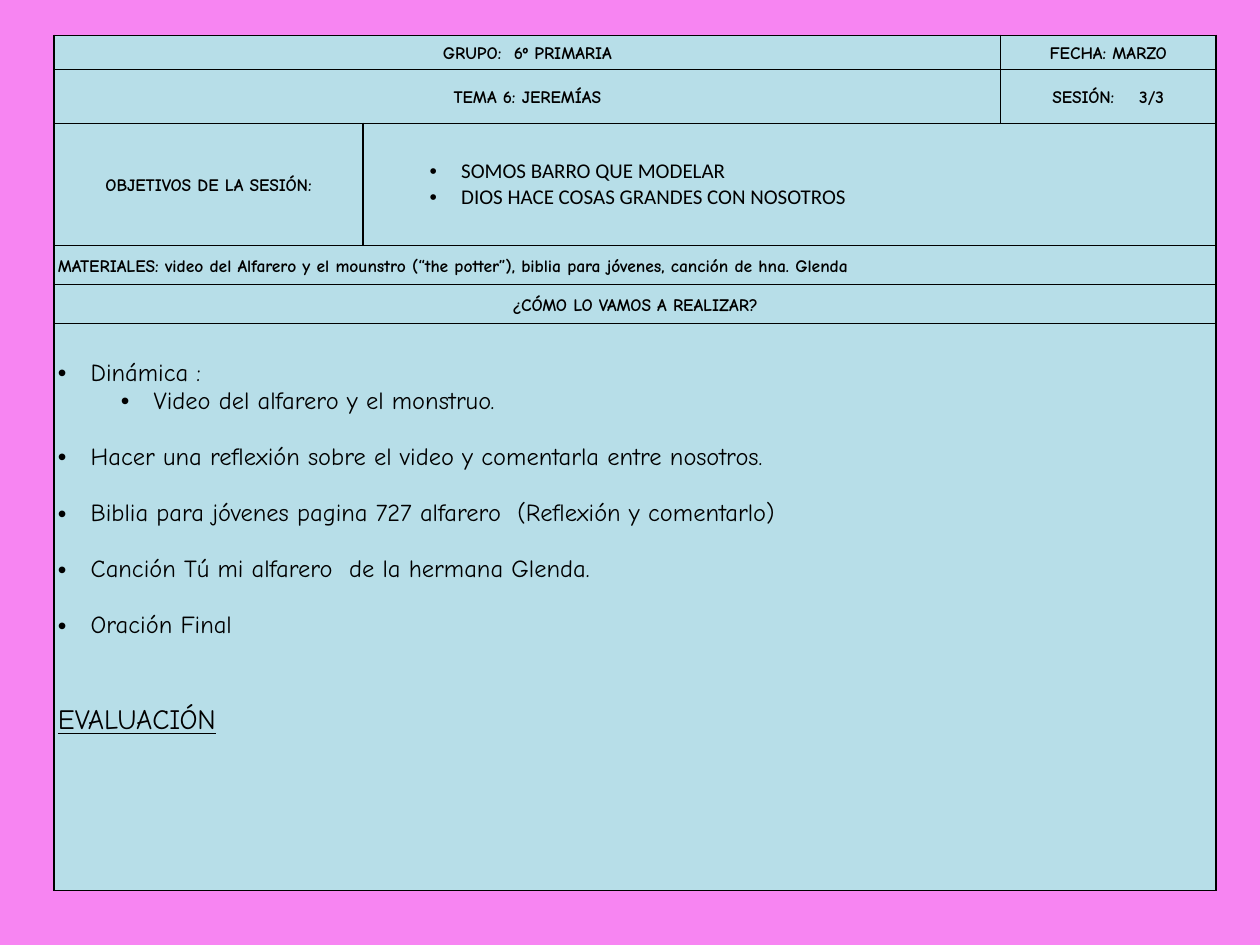
from dataclasses import dataclass

from lxml import etree
from pptx import Presentation
from pptx.dml.color import RGBColor
from pptx.enum.text import MSO_ANCHOR, PP_ALIGN
from pptx.oxml.ns import qn
from pptx.table import Table, _Cell
from pptx.util import Inches, Pt

CENTER, LEFT = PP_ALIGN.CENTER, PP_ALIGN.LEFT
MIDDLE, TOP = MSO_ANCHOR.MIDDLE, MSO_ANCHOR.TOP
PINK, BLUE, BLACK = "F785F2", "B7DEE8", "000000"
COLS = [2.45, 5.06, 1.71]
ROWS = [0.27, 0.43, 0.97, 0.31, 0.31, 4.5]


@dataclass
class Para:
    text: str
    size: int = 10
    font: str = "Comic Neue"
    bold: bool = False
    underline: bool = False
    align: PP_ALIGN = LEFT
    line: float = 1.0
    before: int = 0
    level: int = 0
    indent: float = 0
    hang: float = 0


@dataclass
class Block:
    row: int
    col: int
    span: int
    paras: list[Para]
    anchor: MSO_ANCHOR = MIDDLE
    top: float = 0


def label(text: str, align: PP_ALIGN = CENTER) -> list[Para]:
    return [Para(text, bold=True, align=align, line=1.15)]


def goal(text: str) -> Para:
    return Para(text, 12, "Calibri", level=1, indent=0.75, hang=0.25)


def step(text: str, before: int = 16, level: int = 0) -> Para:
    return Para(text, 14, before=before, level=level,
                indent=0.26 + 0.5 * level, hang=0.26)


BLOCKS = [
    Block(0, 0, 2, label("GRUPO:  6º PRIMARIA")),
    Block(0, 2, 1, label("FECHA: MARZO")),
    Block(1, 0, 2, label("TEMA 6: JEREMÍAS")),
    Block(1, 2, 1, label("SESIÓN:    3/3")),
    Block(2, 0, 1, label("OBJETIVOS DE LA SESIÓN:")),
    Block(2, 1, 2, [goal("SOMOS BARRO QUE MODELAR"),
                    goal("DIOS HACE COSAS GRANDES CON NOSOTROS")]),
    Block(3, 0, 3, label("MATERIALES: video del Alfarero y el mounstro (“the potter”), "
                         "biblia para jóvenes, canción de hna. Glenda", LEFT)),
    Block(4, 0, 3, label("¿CÓMO LO VAMOS A REALIZAR?")),
    Block(5, 0, 3, [
        step("Dinámica :", before=0),
        step("Video del alfarero y el monstruo.", before=0, level=1),
        step("Hacer una reflexión sobre el video y comentarla entre nosotros."),
        step("Biblia para jóvenes pagina 727 alfarero  (Reflexión y comentarlo)"),
        step("Canción Tú mi alfarero  de la hermana Glenda."),
        step("Oración Final"),
        Para("EVALUACIÓN", 16, underline=True, before=37),
    ], TOP, 0.28),
]


def rgb(color: str) -> RGBColor:
    return RGBColor.from_string(color)


def style_cell(cell: _Cell) -> None:
    cell.fill.solid()
    cell.fill.fore_color.rgb = rgb(BLUE)
    tc_pr = cell._tc.get_or_add_tcPr()
    for i, side in enumerate(("a:lnL", "a:lnR", "a:lnT", "a:lnB")):
        ln = etree.Element(qn(side), w=str(Pt(1)))
        fill = etree.SubElement(ln, qn("a:solidFill"))
        etree.SubElement(fill, qn("a:srgbClr"), val=BLACK)
        tc_pr.insert(i, ln)


def add_bullet(p, para: Para) -> None:
    p_pr = p._p.get_or_add_pPr()
    p_pr.set("marL", str(Inches(para.indent)))
    p_pr.set("indent", str(-Inches(para.hang)))
    etree.SubElement(p_pr, qn("a:buFont"), typeface="Arial")
    etree.SubElement(p_pr, qn("a:buChar"), char="•")


def write_para(p, para: Para) -> None:
    p.text = para.text
    p.alignment = para.align
    p.level = para.level
    p.line_spacing = para.line
    p.space_before = Pt(para.before)
    if para.hang:
        add_bullet(p, para)
    p.font.name = para.font
    p.font.size = Pt(para.size)
    p.font.bold = para.bold
    p.font.underline = para.underline
    p.font.color.rgb = rgb(BLACK)
    for r in p.runs:
        r.font.name = para.font
        r.font.size = Pt(para.size)
        r.font.bold = para.bold
        r.font.underline = para.underline
        r.font.color.rgb = rgb(BLACK)


def write_block(table: Table, block: Block) -> None:
    cell = table.cell(block.row, block.col)
    if block.span > 1:
        cell.merge(table.cell(block.row, block.col + block.span - 1))
    cell.vertical_anchor = block.anchor
    cell.margin_left = cell.margin_right = Inches(0.03)
    cell.margin_top, cell.margin_bottom = Inches(block.top), 0
    tf = cell.text_frame
    for i, para in enumerate(block.paras):
        write_para(tf.add_paragraph() if i else tf.paragraphs[0], para)


def main() -> None:
    prs = Presentation()
    prs.slide_width, prs.slide_height = Inches(10), Inches(7.5)
    s = prs.slides.add_slide(prs.slide_layouts[6])
    s.background.fill.solid()
    s.background.fill.fore_color.rgb = rgb(PINK)

    table = s.shapes.add_table(len(ROWS), len(COLS), Inches(0.43), Inches(0.28),
                               Inches(sum(COLS)), Inches(sum(ROWS))).table
    table.first_row = table.horz_banding = False
    for col, width in zip(table.columns, COLS):
        col.width = Inches(width)
    for row, height in zip(table.rows, ROWS):
        row.height = Inches(height)
    for cell in table.iter_cells():
        style_cell(cell)
    for block in BLOCKS:
        write_block(table, block)
    prs.save("out.pptx")


if __name__ == "__main__":
    main()
